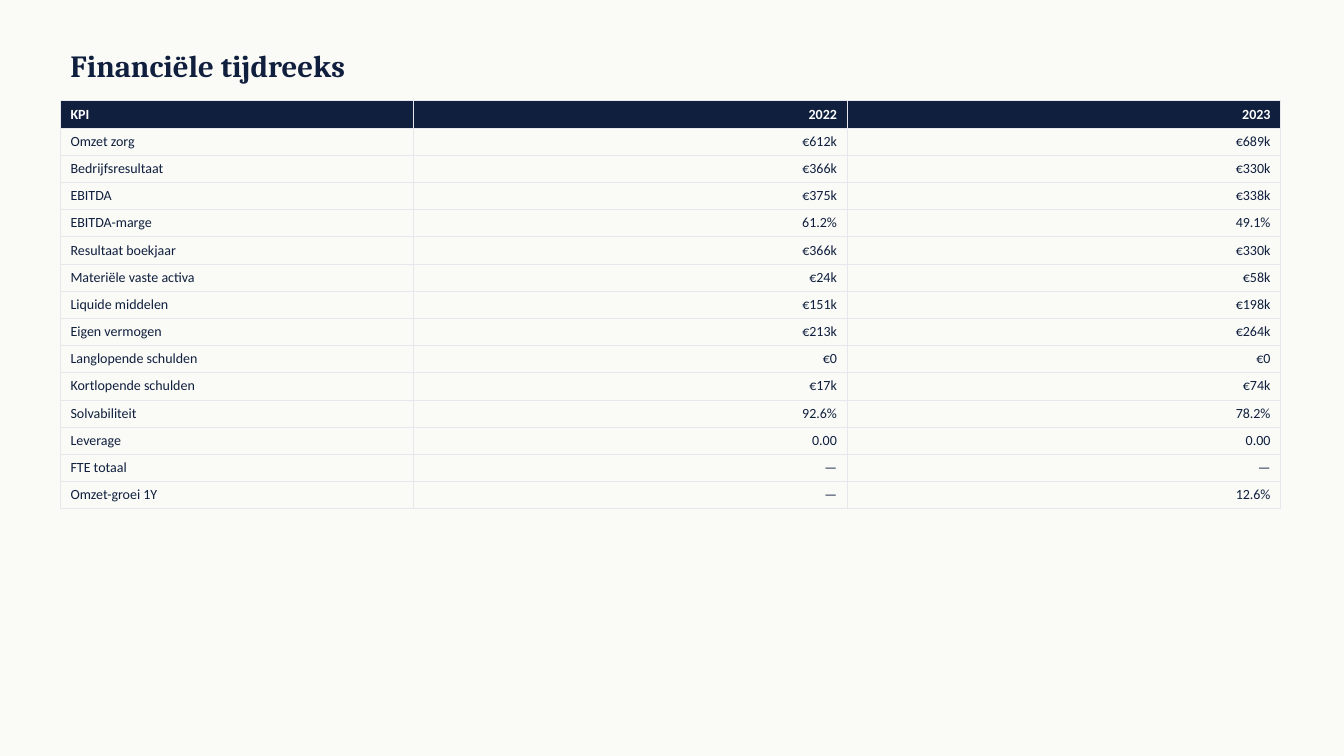
from lxml import etree
from pptx import Presentation
from pptx.dml.color import RGBColor
from pptx.enum.text import MSO_ANCHOR, PP_ALIGN
from pptx.oxml.ns import qn
from pptx.util import Inches, Pt

LEFT, RIGHT = PP_ALIGN.LEFT, PP_ALIGN.RIGHT
MIDDLE = MSO_ANCHOR.MIDDLE
COLORS = {"paper": "FAFAF7", "navy": "0F1F3D", "white": "FFFFFF", "rule": "E5E7EB"}
MARGIN = 0.6
COLUMN_WIDTHS = [3.5, 4.3, 4.3]
ROW_HEIGHT = 0.27
ROWS = [
    ("KPI", "2022", "2023"),
    ("Omzet zorg", "€612k", "€689k"),
    ("Bedrijfsresultaat", "€366k", "€330k"),
    ("EBITDA", "€375k", "€338k"),
    ("EBITDA-marge", "61.2%", "49.1%"),
    ("Resultaat boekjaar", "€366k", "€330k"),
    ("Materiële vaste activa", "€24k", "€58k"),
    ("Liquide middelen", "€151k", "€198k"),
    ("Eigen vermogen", "€213k", "€264k"),
    ("Langlopende schulden", "€0", "€0"),
    ("Kortlopende schulden", "€17k", "€74k"),
    ("Solvabiliteit", "92.6%", "78.2%"),
    ("Leverage", "0.00", "0.00"),
    ("FTE totaal", "—", "—"),
    ("Omzet-groei 1Y", "—", "12.6%"),
]


def write_text(text_frame, text, font="Calibri", size=10, color="navy", bold=False, align=LEFT):
    paragraph = text_frame.paragraphs[0]
    paragraph.alignment = align
    run = paragraph.add_run()
    run.text = text
    run.font.name = font
    run.font.size = Pt(size)
    run.font.bold = bold
    run.font.color.rgb = RGBColor.from_string(COLORS[color])


def add_borders(cell, color, width):
    properties = cell._tc.get_or_add_tcPr()
    for side in ("a:lnL", "a:lnR", "a:lnT", "a:lnB"):
        line = etree.SubElement(properties, qn(side), w=str(Pt(width)))
        fill = etree.SubElement(line, qn("a:solidFill"))
        etree.SubElement(fill, qn("a:srgbClr"), val=COLORS[color])


# Slide and background
presentation = Presentation()
presentation.slide_width = Inches(13.33)
presentation.slide_height = Inches(7.5)
slide = presentation.slides.add_slide(presentation.slide_layouts[6])
slide.background.fill.solid()
slide.background.fill.fore_color.rgb = RGBColor.from_string(COLORS["paper"])

# Title
title = slide.shapes.add_textbox(Inches(MARGIN), Inches(0.4), Inches(12), Inches(0.5))
title.text_frame.word_wrap = True
title.text_frame.vertical_anchor = MIDDLE
write_text(title.text_frame, "Financiële tijdreeks", font="Cambria", size=22, bold=True)

# Table with a dark header row
table = slide.shapes.add_table(
    len(ROWS), len(COLUMN_WIDTHS), Inches(MARGIN), Inches(1),
    Inches(sum(COLUMN_WIDTHS)), Inches(ROW_HEIGHT * len(ROWS))).table
table.first_row = False
table.horz_banding = False
for column, width in zip(table.columns, COLUMN_WIDTHS):
    column.width = Inches(width)

for row_index, values in enumerate(ROWS):
    is_header = row_index == 0
    table.rows[row_index].height = Inches(ROW_HEIGHT)
    for column_index, value in enumerate(values):
        cell = table.cell(row_index, column_index)
        add_borders(cell, "rule", 0.5)
        if is_header:
            cell.fill.solid()
            cell.fill.fore_color.rgb = RGBColor.from_string(COLORS["navy"])
        else:
            cell.fill.background()
        write_text(cell.text_frame, value, bold=is_header,
                   color="white" if is_header else "navy",
                   align=RIGHT if column_index else LEFT)

presentation.save("out.pptx")
